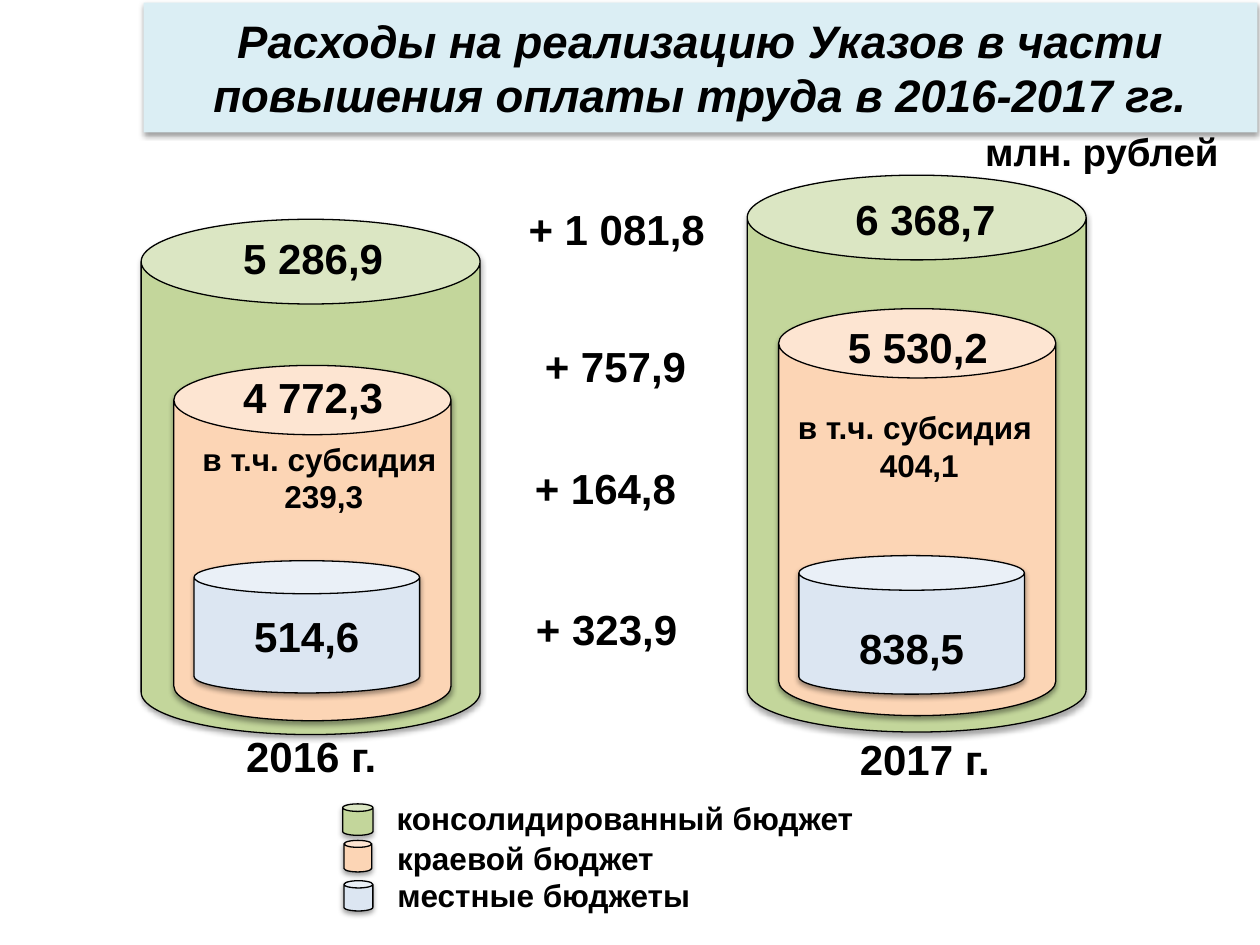
from lxml import etree
from pptx import Presentation
from pptx.dml.color import RGBColor
from pptx.enum.shapes import MSO_SHAPE
from pptx.enum.text import MSO_ANCHOR, PP_ALIGN
from pptx.oxml import parse_xml
from pptx.oxml.ns import nsdecls, qn
from pptx.util import Inches, Pt

CAN = MSO_SHAPE.CAN
MIDDLE = MSO_ANCHOR.MIDDLE
CENTER, RIGHT = PP_ALIGN.CENTER, PP_ALIGN.RIGHT
GREEN, ORANGE, BLUE = "C3D69B", "FCD5B5", "DCE6F2"
TITLE_FILL, BLACK = "DBEEF4", "000000"
LABEL_HEIGHT = 0.5


def color(hex_value):
    return RGBColor.from_string(hex_value)


def place(shape, left, top, width, height):
    shape.left, shape.top = Inches(left), Inches(top)
    shape.width, shape.height = Inches(width), Inches(height)


def paint(shape, fill):
    shape.fill.solid()
    shape.fill.fore_color.rgb = color(fill)


def cast_shadow(shape, opacity=38, distance=1.6):
    properties = shape.element.spPr
    for old in properties.findall(qn("a:effectLst")):
        properties.remove(old)
    properties.append(parse_xml(
        f'<a:effectLst {nsdecls("a")}>'
        f'<a:outerShdw blurRad="{Pt(3.1)}" dist="{Pt(distance)}" dir="5400000" rotWithShape="0">'
        f'<a:srgbClr val="{BLACK}"><a:alpha val="{opacity * 1000}"/></a:srgbClr>'
        '</a:outerShdw></a:effectLst>'))


def style(para, size, align=CENTER):
    para.alignment = align
    para.font.name = "Arial"
    para.font.size = Pt(size)
    para.font.bold = True
    para.font.color.rgb = color(BLACK)


def add_label(page, lines, left, top, width, height=LABEL_HEIGHT, size=24,
              align=CENTER, wrap=False):
    box = page.shapes.add_textbox(Inches(left), Inches(top), Inches(width), Inches(height))
    frame = box.text_frame
    frame.word_wrap = wrap
    frame.text = lines
    for para in frame.paragraphs:
        style(para, size, align)


def add_can(page, fill, left, top, width, height):
    can = page.shapes.add_shape(CAN, Inches(left), Inches(top), Inches(width), Inches(height))
    paint(can, fill)
    can.line.color.rgb = color(BLACK)
    can.line.width = Pt(0.75)
    if fill == GREEN:
        cast_shadow(can, 35, 1.8)
    else:
        cast_shadow(can)


def add_title(page, left, top, width, height):
    title = page.shapes.title
    place(title, left, top, width, height)
    outline = etree.SubElement(title.element.spPr, qn("a:prstGeom"), prst="roundRect")
    etree.SubElement(outline, qn("a:avLst"))
    paint(title, TITLE_FILL)
    cast_shadow(title)
    frame = title.text_frame
    frame.margin_left = frame.margin_right = frame.margin_top = frame.margin_bottom = 0
    frame.vertical_anchor = MIDDLE
    frame.word_wrap = True
    frame.text = "Расходы на реализацию Указов в части повышения оплаты труда в 2016-2017 гг."
    para = frame.paragraphs[0]
    style(para, 26)
    para.font.italic = True


def add_year(page, left, top, cans, labels, subsidy):
    for fill, (x, y, width, height) in zip((GREEN, ORANGE, BLUE), cans):
        add_can(page, fill, left + x, top + y, width, height)
    for words, x, y, width in labels:
        add_label(page, words, left + x, top + y, width)
    amount, x, y, width = subsidy
    add_label(page, f"в т.ч. субсидия \n{amount}", left + x, top + y, width, 0.71, 18, wrap=True)


def add_changes(page, left, top):
    changes = [("+ 1 081,8", 0, 0, 1.61), ("+ 757,9", 0.13, 1.08, 1.33),
               ("+ 164,8", 0.05, 2.05, 1.33), ("+ 323,9", 0.06, 3.17, 1.33)]
    for words, x, y, width in changes:
        add_label(page, words, left + x, top + y, width)


def add_legend(page, left, top):
    entries = [
        (GREEN, (0, 0.09, 0.24, 0.25), "консолидированный бюджет", (0.24, 0, 4)),
        (ORANGE, (0.01, 0.38, 0.22, 0.25), "краевой бюджет", (0.32, 0.32, 2.26)),
        (BLUE, (0.01, 0.7, 0.23, 0.24), "местные бюджеты", (0.32, 0.61, 2.55)),
    ]
    for fill, (can_x, can_y, can_width, can_height), words, (x, y, width) in entries:
        add_can(page, fill, left + can_x, top + can_y, can_width, can_height)
        add_label(page, words, left + x, top + y, width, 0.4, 18)


def main():
    deck = Presentation()
    deck.slide_width, deck.slide_height = Inches(10), Inches(7.5)
    page = deck.slides.add_slide(deck.slide_layouts[5])
    add_title(page, 1.14, 0.02, 8.84, 1.03)
    add_label(page, "млн. рублей", 7.65, 0.97, 2.12, 0.47, 22, RIGHT, True)
    add_year(
        page, 1.12, 1.74,
        [(0, 0, 2.69, 4.09), (0.26, 1.16, 2.2, 2.82), (0.42, 2.71, 1.79, 1.05)],
        [("5 286,9", 0.7, 0.06, 1.33), ("4 772,3", 0.7, 1.16, 1.33),
         ("514,6", 0.79, 3.06, 1.05), ("2016 г.", 0.73, 4.01, 1.24)],
        ("239,3", -0.14, 1.7, 3.18))
    add_year(
        page, 5.93, 1.39,
        [(0, 0, 2.69, 4.42), (0.25, 1.06, 2.2, 3.23), (0.41, 3.02, 1.79, 1.1)],
        [("6 368,7", 0.75, 0.1, 1.33), ("5 530,2", 0.69, 1.11, 1.33),
         ("838,5", 0.78, 3.5, 1.05), ("2017 г.", 0.79, 4.38, 1.24)],
        ("404,1", -0.09, 1.8, 2.91))
    add_changes(page, 4.09, 1.57)
    add_legend(page, 2.72, 6.29)
    deck.save("out.pptx")


if __name__ == "__main__":
    main()
